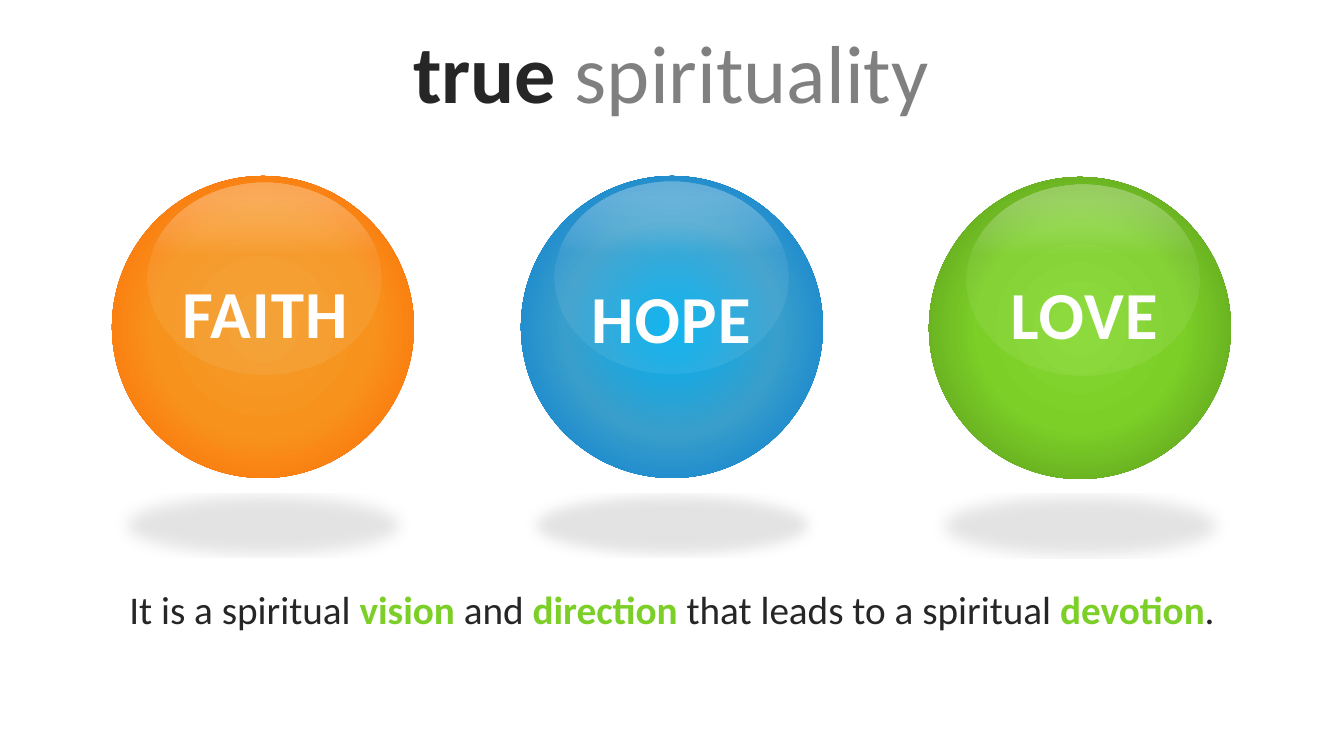
"""Build the slide on true spirituality: three glossy balls above a closing line."""
from lxml import etree
from pptx import Presentation
from pptx.dml.color import RGBColor
from pptx.enum.shapes import MSO_SHAPE
from pptx.enum.text import MSO_ANCHOR, PP_ALIGN
from pptx.oxml import parse_xml
from pptx.util import Emu, Pt

OVAL = MSO_SHAPE.OVAL
MIDDLE, TOP = MSO_ANCHOR.MIDDLE, MSO_ANCHOR.TOP
NS = "http://schemas.openxmlformats.org/drawingml/2006/main"

COLORS = {"ink": "262626", "grey": "808080", "green": "7BCF27",
          "white": "FFFFFF", "black": "000000"}

TITLE = [("true ", "ink", True), ("spirituality", "grey", False)]
CLOSING = [("It is a spiritual ", "ink", False), ("vision", "green", True),
           (" and ", "ink", False), ("direction ", "green", True),
           ("that leads to a spiritual ", "ink", False),
           ("devotion", "green", True), (".", "ink", False)]
BALLS = [
    {"word": "FAITH", "ball": (112, 176), "label": (123, 282), "gloss": (148, 183), "blur": 12,
     "stops": [(0, "F39C29", 100), (50, "F7931D", 100), (100, "FF6600", 100)]},
    {"word": "HOPE", "ball": (521, 176), "label": (529, 287), "gloss": (555, 182), "blur": 10,
     "stops": [(0, "00B0F0", 100), (50, "399ECB", 100), (100, "0077D0", 100)]},
    {"word": "LOVE", "ball": (929, 177), "label": (942, 283), "gloss": (966, 185), "blur": 12,
     "stops": [(5, "84D830", 100), (48, "7BCF27", 100), (100, "56901C", 100)]},
]
GLOSS_STOPS = [(63, COLORS["white"], 7), (72, COLORS["white"], 15), (91, COLORS["white"], 28)]
RADIAL = ('<a:path path="circle"><a:fillToRect l="50000" t="50000" '
          'r="50000" b="50000"/></a:path>')
UPWARD = '<a:lin ang="16200000" scaled="0"/>'

BALL_SIZE, LABEL_SIZE, GLOSS_SIZE = (302, 302), (284, 99), (233, 191)


def px(length):
    return Emu(round(length * 914400 / 100.8))


def box(corner, size):
    return [px(length) for length in (*corner, *size)]


def add_text(shapes, corner, size, runs, points, anchor=TOP, line_spacing=1.0, tracking=0):
    frame = shapes.add_textbox(*box(corner, size)).text_frame
    frame.word_wrap = True
    frame.vertical_anchor = anchor
    paragraph = frame.paragraphs[0]
    paragraph.alignment = PP_ALIGN.CENTER
    paragraph.line_spacing = line_spacing
    for words, color, bold in runs:
        run = paragraph.add_run()
        run.text = words
        for key, value in {"name": "Calibri", "size": Pt(points), "bold": bold}.items():
            setattr(run.font, key, value)
        run.font.color.rgb = RGBColor.from_string(COLORS[color])
        if tracking:
            run.font._element.set("spc", str(tracking))


def add_oval(shapes, corner, size, stops, direction):
    oval = shapes.add_shape(OVAL, *box(corner, size))
    oval.shadow.inherit = False
    oval.line.fill.background()
    marks = "".join(
        f'<a:gs pos="{at * 1000}"><a:srgbClr val="{color}">'
        f'<a:alpha val="{opacity * 1000}"/></a:srgbClr></a:gs>'
        for at, color, opacity in stops)
    oval.line._ln.addprevious(parse_xml(
        f'<a:gradFill xmlns:a="{NS}" rotWithShape="1"><a:gsLst>{marks}</a:gsLst>'
        f'{direction}</a:gradFill>'))
    return oval


def add_floor_shadow(oval, blur):
    effects = oval._element.spPr.find(f"{{{NS}}}effectLst")
    cast = etree.SubElement(effects, f"{{{NS}}}outerShdw", {
        "blurRad": str(Pt(blur)), "dist": str(Pt(13)), "dir": "5400000",
        "sx": "90000", "sy": "-19000", "algn": "b", "rotWithShape": "0"})
    color = etree.SubElement(cast, f"{{{NS}}}srgbClr", {"val": COLORS["black"]})
    etree.SubElement(color, f"{{{NS}}}alpha", {"val": "11000"})


def main():
    deck = Presentation()
    deck.slide_width, deck.slide_height = px(1344), px(756)
    shapes = deck.slides.add_slide(deck.slide_layouts[6]).shapes
    add_text(shapes, (112, 557), (1120, 213), CLOSING, 28, line_spacing=1.5)
    add_text(shapes, (66, 8), (1210, 126), TITLE, 58.7, anchor=MIDDLE)
    for virtue in BALLS:
        group = shapes.add_group_shape().shapes
        ball = add_oval(group, virtue["ball"], BALL_SIZE, virtue["stops"], RADIAL)
        add_floor_shadow(ball, virtue["blur"])
        add_text(group, virtue["label"], LABEL_SIZE, [(virtue["word"], "white", True)], 48,
                 line_spacing=0.8, tracking=80)
        add_oval(group, virtue["gloss"], GLOSS_SIZE, GLOSS_STOPS, UPWARD)
    deck.save("out.pptx")


if __name__ == "__main__":
    main()
